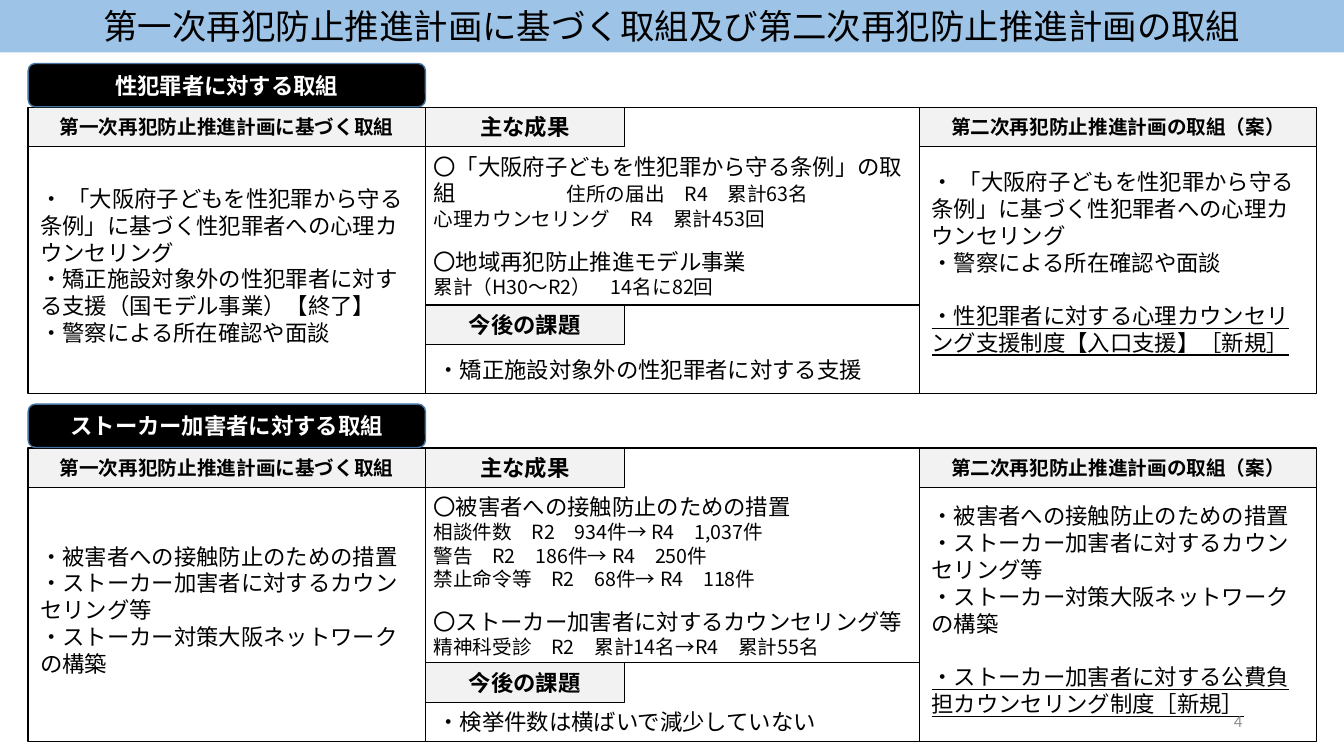
from dataclasses import dataclass

from lxml import etree
from pptx import Presentation
from pptx.dml.color import RGBColor
from pptx.enum.shapes import MSO_SHAPE
from pptx.enum.text import MSO_ANCHOR, MSO_AUTO_SIZE, PP_ALIGN
from pptx.oxml.ns import qn
from pptx.util import Inches, Pt

RECT, ROUNDED = MSO_SHAPE.RECTANGLE, MSO_SHAPE.ROUNDED_RECTANGLE
TOP, MIDDLE = MSO_ANCHOR.TOP, MSO_ANCHOR.MIDDLE
LEFT, CENTER, RIGHT = PP_ALIGN.LEFT, PP_ALIGN.CENTER, PP_ALIGN.RIGHT
NO_AUTOFIT = MSO_AUTO_SIZE.NONE

JAPANESE = "Noto Sans CJK JP"
BLACK, WHITE, GREY, BLUE = "000000", "FFFFFF", "F2F2F2", "9DC3E6"
SIDE_W, MIDDLE_W, TAB_W = 3.94, 4.9, 1.97
BADGE_H, HEADER_H = 0.43, 0.39
LINE_FACTOR = 1.2
DETAIL_TAB = 1.32


@dataclass
class Line:
    """One paragraph with its size, the space above it and its underline."""
    text: str
    size: float = 16
    gap: float = 0
    underline: bool = False


@dataclass
class Topic:
    """Contents and measures of one group of measures."""
    name: str
    top: float
    height: float
    results_height: float
    first_plan: list
    first_inset: float
    results: list
    issue: str
    issue_inset: float
    second_plan: list
    second_inset: float


TOPICS = [
    Topic(
        "性犯罪者に対する取組", 0.63, 2.84, 1.96,
        [Line("・ 「大阪府子どもを性犯罪から守る条例」に基づく性犯罪者への心理カウンセリング"),
         Line("・矯正施設対象外の性犯罪者に対する支援（国モデル事業）【終了】"),
         Line("・警察による所在確認や面談")], 0.36,
        [Line("〇「大阪府子どもを性犯罪から守る条例」の取組\t住所の届出　R4　累計63名"),
         Line("心理カウンセリング　R4　累計453回", 14),
         Line("〇地域再犯防止推進モデル事業", gap=13.2),
         Line("累計（H30～R2）　14名に82回", 14)],
        "・矯正施設対象外の性犯罪者に対する支援", 0.51,
        [Line("・ 「大阪府子どもを性犯罪から守る条例」に基づく性犯罪者への心理カウンセリング"),
         Line("・警察による所在確認や面談"),
         Line("・性犯罪者に対する心理カウンセリング支援制度【入口支援】［新規］", gap=19.2, underline=True)], 0.29),
    Topic(
        "ストーカー加害者に対する取組", 4.01, 2.91, 2.13,
        [Line("・被害者への接触防止のための措置"),
         Line("・ストーカー加害者に対するカウンセリング等"),
         Line("・ストーカー対策大阪ネットワークの構築")], 0.36,
        [Line("〇被害者への接触防止のための措置"),
         Line("相談件数　R2　934件→ R4　1,037件", 14),
         Line("警告　R2　186件→ R4　250件", 14),
         Line("禁止命令等　R2　68件→ R4　118件", 14),
         Line("〇ストーカー加害者に対するカウンセリング等", gap=12),
         Line("精神科受診　R2　累計14名→R4　累計55名", 14)],
        "・検挙件数は横ばいで減少していない", 0.45,
        [Line("・被害者への接触防止のための措置"),
         Line("・ストーカー加害者に対するカウンセリング等"),
         Line("・ストーカー対策大阪ネットワークの構築"),
         Line("・ストーカー加害者に対する公費負担カウンセリング制度［新規］", gap=19.2, underline=True)], 0.36),
]


def color(hex_code):
    """Turn a hex string into a colour."""
    return RGBColor.from_string(hex_code)


def format_run(run, size, hex_code=BLACK, bold=False, underline=False, font=JAPANESE):
    """Set the font of a run for Latin and East Asian text."""
    run.font.size, run.font.name = Pt(size), font
    run.font.bold, run.font.underline = bold, underline
    run.font.color.rgb = color(hex_code)
    etree.SubElement(run._r.get_or_add_rPr(), qn("a:ea")).set("typeface", font)


def set_frame(frame, anchor, side, top, bottom):
    """Set wrapping, anchor and insets of a text frame."""
    frame.word_wrap, frame.auto_size = True, NO_AUTOFIT
    frame.vertical_anchor = anchor
    frame.margin_left = frame.margin_right = Inches(side)
    frame.margin_top, frame.margin_bottom = Inches(top), Inches(bottom)


def write_line(paragraph, line, align, hex_code, bold):
    """Write one paragraph, with a smaller detail after a tab."""
    main, tab, detail = line.text.partition("\t")
    paragraph.text = main
    paragraph.alignment = align
    paragraph.line_spacing = Pt(line.size * LINE_FACTOR)
    paragraph.space_before = Pt(line.gap)
    format_run(paragraph.runs[0], line.size, hex_code, bold, line.underline)
    if tab:
        detail_run = paragraph.add_run()
        detail_run.text = tab + detail
        format_run(detail_run, 14, hex_code)
        stops = etree.SubElement(paragraph._p.get_or_add_pPr(), qn("a:tabLst"))
        stop = etree.SubElement(stops, qn("a:tab"))
        stop.set("pos", str(Inches(DETAIL_TAB)))
        stop.set("algn", "l")


def add_panel(slide, box, lines, fill=WHITE, outline=BLACK, weight=1.0, preset=RECT, anchor=MIDDLE,
              align=LEFT, hex_code=BLACK, bold=False, side=0.12, top=0.06):
    """Add an outlined shape holding the given lines."""
    panel = slide.shapes.add_shape(preset, *map(Inches, box))
    panel.shadow.inherit = False
    panel.fill.solid()
    panel.fill.fore_color.rgb = color(fill)
    panel.line.color.rgb = color(outline)
    panel.line.width = Pt(weight)
    frame = panel.text_frame
    set_frame(frame, anchor, side, top, 0.06)
    for index, line in enumerate(lines):
        paragraph = frame.add_paragraph() if index else frame.paragraphs[0]
        write_line(paragraph, line, align, hex_code, bold)


def add_header(slide, left, top, width, text, size=16):
    """Add a grey heading strip."""
    add_panel(slide, (left, top, width, HEADER_H), [Line(text, size)], fill=GREY,
              weight=0.75, align=CENTER, bold=True, side=0.1)


def add_plan(slide, box, heading, lines, inset):
    """Add a plan column with its heading."""
    left, top, width, _ = box
    add_panel(slide, box, lines, top=inset)
    add_header(slide, left, top, width, heading, 14)


def add_outcome(slide, box, heading, lines, inset, side):
    """Add a middle box with a heading tab in its corner."""
    left, top, _, _ = box
    add_panel(slide, box, lines, anchor=TOP, side=side, top=inset)
    add_header(slide, left, top, TAB_W, heading)


def add_topic(slide, left, topic):
    """Add a badge and the three columns below it."""
    body = topic.top + BADGE_H + 0.005
    middle = left + SIDE_W
    right = middle + MIDDLE_W
    issue_top = body + topic.results_height
    issue_height = topic.height - topic.results_height
    add_plan(slide, (left, body, SIDE_W, topic.height), "第一次再犯防止推進計画に基づく取組",
             topic.first_plan, topic.first_inset)
    add_panel(slide, (left, topic.top, SIDE_W, BADGE_H), [Line(topic.name)], fill=BLACK,
              outline="43739E", preset=ROUNDED, align=CENTER, hex_code=WHITE, bold=True)
    add_plan(slide, (right, body, SIDE_W, topic.height), "第二次再犯防止推進計画の取組（案）",
             topic.second_plan, topic.second_inset)
    add_outcome(slide, (middle, issue_top, MIDDLE_W, issue_height), "今後の課題",
                [Line(topic.issue)], topic.issue_inset, 0.12)
    add_outcome(slide, (middle, body, MIDDLE_W, topic.results_height), "主な成果",
                topic.results, 0.45, 0.08)


def add_title(slide, box, text):
    """Place the title band across the slide."""
    title = slide.shapes.title
    title.left, title.top, title.width, title.height = map(Inches, box)
    title.fill.solid()
    title.fill.fore_color.rgb = color(BLUE)
    title.text_frame.text = text
    set_frame(title.text_frame, MIDDLE, 0.1, 0, 0)
    paragraph = title.text_frame.paragraphs[0]
    paragraph.alignment = CENTER
    format_run(paragraph.runs[0], 24.6)


def add_page_number(slide, box, number):
    """Add the page number at the bottom right."""
    frame = slide.shapes.add_textbox(*map(Inches, box)).text_frame
    set_frame(frame, MIDDLE, 0.1, 0.05, 0.05)
    frame.text = number
    frame.paragraphs[0].alignment = RIGHT
    format_run(frame.paragraphs[0].runs[0], 12, "8C8C8C", font="Calibri")


def main():
    """Build the slide and save it."""
    presentation = Presentation()
    presentation.slide_width, presentation.slide_height = Inches(13.33), Inches(7.5)
    slide = presentation.slides.add_slide(presentation.slide_layouts[5])
    add_title(slide, (0, 0, 13.33, 0.52), "第一次再犯防止推進計画に基づく取組及び第二次再犯防止推進計画の取組")
    for topic in TOPICS:
        add_topic(slide, 0.28, topic)
    add_page_number(slide, (9.42, 6.95, 3, 0.4), "4")
    presentation.save("out.pptx")


if __name__ == "__main__":
    main()
